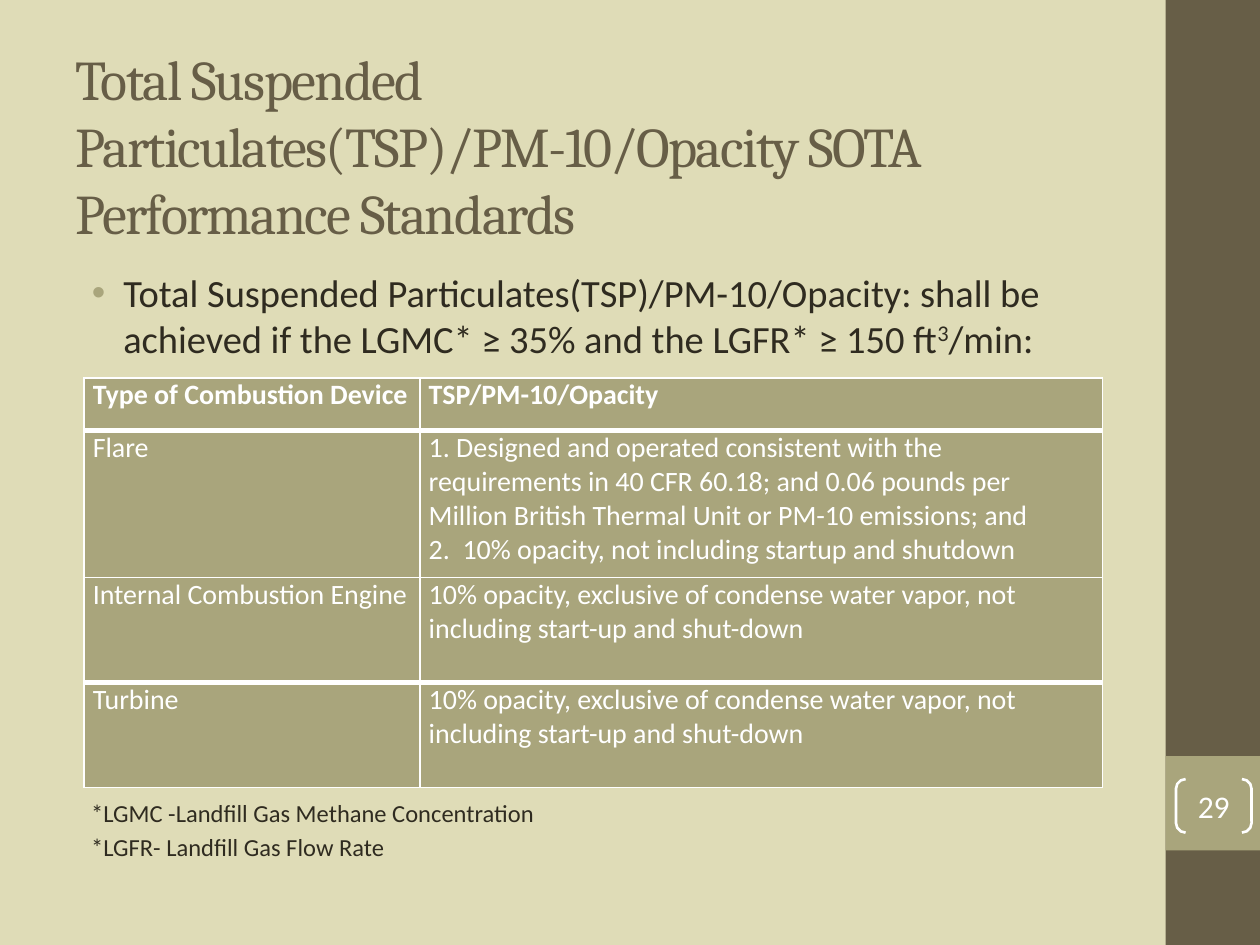
from dataclasses import dataclass

from lxml.etree import SubElement
from pptx import Presentation
from pptx.dml.color import RGBColor
from pptx.enum.shapes import MSO_SHAPE as Shape
from pptx.enum.text import MSO_ANCHOR as Anchor, PP_ALIGN as Align
from pptx.oxml.ns import qn
from pptx.util import Inches, Pt


@dataclass(frozen=True)
class Theme:
    """Colours, fonts and type sizes of the deck."""
    paper: str = "DFDCB7"
    brown: str = "675E47"
    olive: str = "A9A57C"
    ink: str = "2F2B20"
    white: str = "FFFFFF"
    heading: str = "Cambria"
    body: str = "Calibri"
    title_size: int = 32
    lead_size: int = 22
    number_size: int = 18
    table_size: int = 16
    note_size: int = 14


THEME = Theme()
COLUMNS, ROWS = 120, 90


def rgb(code):
    """Turn a hex code into a colour."""
    return RGBColor.from_string(code)


def write(para, text, *, size, color, font=THEME.body, bold=False, align=None,
          before=0, tracking=None, raised=False):
    """Add formatted text to a paragraph."""
    span = para.add_run()
    span.text = text
    span.font.name, span.font.size, span.font.bold = font, Pt(size), bold
    span.font.color.rgb = rgb(color)
    para.space_before = Pt(before)
    if align is not None:
        para.alignment = align
    properties = span.font._element
    if tracking is not None:
        properties.set("spc", str(tracking))
    if raised:
        properties.set("baseline", "30000")


def paragraphs(frame, count):
    """Return the given number of paragraphs of a text frame."""
    return [frame.paragraphs[0]] + [frame.add_paragraph() for _ in range(count - 1)]


def add_bullet(para, color, margin, hang):
    """Give a paragraph a coloured bullet with a hanging indent."""
    properties = para._p.get_or_add_pPr()
    properties.set("marL", str(Inches(margin)))
    properties.set("indent", str(-Inches(hang)))
    tint = SubElement(properties, qn("a:buClr"))
    SubElement(tint, qn("a:srgbClr"), val=color)
    SubElement(properties, qn("a:buFont"), typeface="Arial")
    SubElement(properties, qn("a:buChar"), char="•")


def add_borders(cell, color, top, bottom):
    """Draw the four borders of a cell."""
    properties = cell._tc.get_or_add_tcPr()
    for side, width in (("L", 1), ("R", 1), ("T", top), ("B", bottom)):
        line = SubElement(properties, qn(f"a:ln{side}"), w=str(Pt(width)))
        fill = SubElement(line, qn("a:solidFill"))
        SubElement(fill, qn("a:srgbClr"), val=color)


class SlideBuilder:
    """Places styled elements on a page by grid columns and rows."""

    def __init__(self, deck, theme):
        """Add a blank page with the theme's background."""
        self.theme = theme
        self.deck = deck
        self.page = deck.slides.add_slide(deck.slide_layouts[6])
        self.page.background.fill.solid()
        self.page.background.fill.fore_color.rgb = rgb(theme.paper)

    def across(self, columns):
        """Convert grid columns to a length."""
        return round(self.deck.slide_width * columns / COLUMNS)

    def down(self, rows):
        """Convert grid rows to a length."""
        return round(self.deck.slide_height * rows / ROWS)

    def area(self, left, top, width, height):
        """Convert a grid area to lengths."""
        return self.across(left), self.down(top), self.across(width), self.down(height)

    def panel(self, area, color):
        """Add a plain filled rectangle."""
        box = self.page.shapes.add_shape(Shape.RECTANGLE, *self.area(*area))
        box.shadow.inherit = False
        box.fill.solid()
        box.fill.fore_color.rgb = rgb(color)
        box.line.fill.background()

    def text_frame(self, area, anchor=Anchor.TOP):
        """Add a wrapping text box and return its frame."""
        frame = self.page.shapes.add_textbox(*self.area(*area)).text_frame
        frame.word_wrap = True
        frame.vertical_anchor = anchor
        return frame

    def title(self, area, text):
        """Add the slide title."""
        frame = self.text_frame(area, Anchor.MIDDLE)
        write(frame.paragraphs[0], text, size=self.theme.title_size,
              color=self.theme.brown, font=self.theme.heading, tracking=-100)

    def lead(self, area, spans):
        """Add a bullet made of (text, raised) spans."""
        para = self.text_frame(area).paragraphs[0]
        for text, raised in spans:
            write(para, text, size=self.theme.lead_size, color=self.theme.ink, raised=raised)
        add_bullet(para, self.theme.olive, 0.38, 0.25)

    def notes(self, area, lines):
        """Add footnotes, one paragraph a line."""
        frame = self.text_frame(area)
        for index, (para, text) in enumerate(zip(paragraphs(frame, len(lines)), lines)):
            write(para, text, size=self.theme.note_size, color=self.theme.ink,
                  before=2.8 if index else 0)

    def table(self, left, top, widths, heights, content, heavy_rules):
        """Add a table with heavy rules below the given rows."""
        area = self.area(left, top, sum(widths), sum(heights))
        table = self.page.shapes.add_table(len(heights), len(widths), *area).table
        for column, width in zip(table.columns, widths):
            column.width = self.across(width)
        for index, (row, height) in enumerate(zip(table.rows, heights)):
            row.height = self.down(height)
            for cell, lines in zip(row.cells, content[index]):
                add_borders(cell, self.theme.white,
                            top=3 if index - 1 in heavy_rules else 1,
                            bottom=3 if index in heavy_rules else 1)
                self.fill_cell(cell, lines, bold=index == 0)

    def fill_cell(self, cell, lines, bold):
        """Colour a cell and write its lines."""
        cell.fill.solid()
        cell.fill.fore_color.rgb = rgb(self.theme.olive)
        cell.margin_left = cell.margin_right = Inches(0.07)
        cell.margin_top = cell.margin_bottom = 0
        for para, text in zip(paragraphs(cell.text_frame, len(lines)), lines):
            write(para, text, size=self.theme.table_size, color=self.theme.white, bold=bold)

    def page_number(self, area, text):
        """Add the page number between brackets."""
        box = self.page.shapes.add_shape(Shape.DOUBLE_BRACKET, *self.area(*area))
        box.shadow.inherit = False
        box.adjustments[0] = 0.18
        box.fill.background()
        box.line.color.rgb = rgb(self.theme.white)
        box.line.width = Pt(1.5)
        frame = box.text_frame
        frame.margin_left = frame.margin_right = frame.margin_top = frame.margin_bottom = 0
        frame.vertical_anchor = Anchor.MIDDLE
        write(frame.paragraphs[0], text, size=self.theme.number_size,
              color=self.theme.white, align=Align.CENTER)


def main():
    """Build and save the deck."""
    deck = Presentation()
    deck.slide_width, deck.slide_height = Inches(10), Inches(7.5)
    slide = SlideBuilder(deck, THEME)
    slide.panel((111, 0, 9, 90), THEME.brown)
    slide.panel((111, 72, 9, 9), THEME.olive)
    slide.title((6, 3.6, 100, 20.4),
                "Total Suspended Particulates(TSP)/PM-10/Opacity SOTA Performance Standards")
    slide.lead((6, 25, 100, 10.5), [
        ("Total Suspended Particulates(TSP)/PM-10/Opacity: shall be achieved "
         "if the LGMC* ≥ 35% and the LGFR* ≥ 150 ft", False),
        ("3", True),
        ("/min:", False),
    ])
    opacity = ["10% opacity, exclusive of condense water vapor, not including start-up and shut-down"]
    slide.table(8, 36, [32, 65], [5, 14, 10, 10], [
        (["Type of Combustion Device"], ["TSP/PM-10/Opacity"]),
        (["Flare"],
         ["1. Designed and operated consistent with the requirements in 40 CFR 60.18; and "
          "0.06 pounds per Million British Thermal Unit or PM-10 emissions; and",
          "2.  10% opacity, not including startup and shutdown"]),
        (["Internal Combustion Engine"], opacity),
        (["Turbine"], opacity),
    ], heavy_rules={0, 2})
    slide.notes((7.5, 75.4, 98.5, 8),
                ["*LGMC -Landfill Gas Methane Concentration", "*LGFR- Landfill Gas Flow Rate"])
    slide.page_number((112, 74.2, 7.2, 5.1), "29")
    deck.save("out.pptx")


if __name__ == "__main__":
    main()
